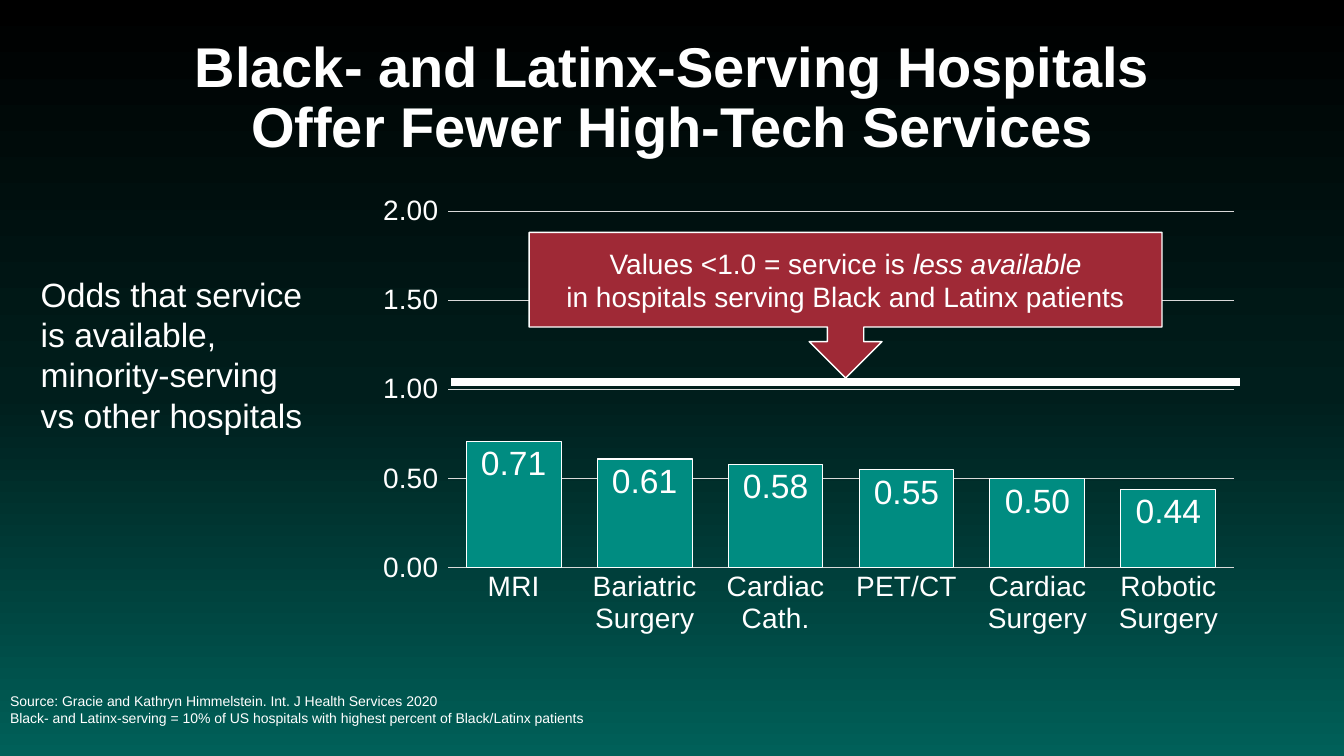
from copy import deepcopy

from pptx import Presentation
from pptx.chart.data import CategoryChartData
from pptx.dml.color import RGBColor
from pptx.enum.chart import XL_CHART_TYPE, XL_LABEL_POSITION, XL_TICK_MARK
from pptx.enum.shapes import MSO_CONNECTOR, MSO_SHAPE
from pptx.enum.text import MSO_ANCHOR, MSO_AUTO_SIZE, PP_ALIGN
from pptx.oxml.ns import qn
from pptx.oxml.xmlchemy import OxmlElement
from pptx.util import Pt

WHITE = "FFFFFF"
GRID = "D9D9D9"
TEAL = "008C81"
RED = "9F2936"
GRADIENT = [(0, "000000"), (0.52, "001E1C"), (1, "006059")]
ODDS = {
    "MRI": 0.71,
    "Bariatric\nSurgery": 0.61,
    "Cardiac\nCath.": 0.58,
    "PET/CT": 0.55,
    "Cardiac\nSurgery": 0.5,
    "Robotic\nSurgery": 0.44,
}


def color(hex_value):
    """Return the colour for a hex string."""
    return RGBColor.from_string(hex_value)


def set_values(target, values):
    """Set each named attribute of the target."""
    for name, value in values.items():
        setattr(target, name, value)


def set_font(font, size, **values):
    """Format a font as white Arial of the given size."""
    set_values(font, {"name": "Arial", "size": Pt(size), **values})
    font.color.rgb = color(WHITE)


def set_line(line, hex_value, width):
    """Give a line its colour and width."""
    line.color.rgb = color(hex_value)
    line.width = Pt(width)


def place(shape, box):
    """Move a shape to a box given in points."""
    names = ("left", "top", "width", "height")
    set_values(shape, dict(zip(names, map(Pt, box))))


def write(shape, paragraphs, size, frame_values, paragraph_values, bold=False):
    """Fill a shape with paragraphs and format all their runs."""
    frame = shape.text_frame
    set_values(frame, {"word_wrap": True, **frame_values})
    for index, text in enumerate(paragraphs):
        paragraph = frame.add_paragraph() if index else frame.paragraphs[0]
        paragraph.text = text
        set_values(paragraph, paragraph_values)
        for run in paragraph.runs:
            set_font(run.font, size, bold=bold)


def paint_background(slide):
    """Fill the background with the vertical three-stop gradient."""
    fill = slide.background.fill
    fill.gradient()
    fill.gradient_angle = 270
    stop_list = slide.element.find(".//" + qn("a:gsLst"))
    stop_list.append(deepcopy(stop_list[-1]))
    for stop, (position, hex_value) in zip(fill.gradient_stops, GRADIENT):
        stop.position = position
        stop.color.rgb = color(hex_value)


def add_title(slide, box):
    """Write the two-line title."""
    title = slide.shapes.title
    place(title, box)
    write(title, ["Black- and Latinx-Serving Hospitals\vOffer Fewer High-Tech Services"], 40,
          {"vertical_anchor": MSO_ANCHOR.MIDDLE, "auto_size": MSO_AUTO_SIZE.NONE},
          {"alignment": PP_ALIGN.CENTER, "line_spacing": 0.9}, bold=True)


def add_source(slide, box):
    """Write the source note without bullets."""
    body = slide.placeholders[1]
    place(body, box)
    write(body, ["Source: Gracie and Kathryn Himmelstein. Int. J Health Services 2020",
                 "Black- and Latinx-serving = 10% of US hospitals with highest percent "
                 "of Black/Latinx patients"], 10,
          {"vertical_anchor": MSO_ANCHOR.MIDDLE, "auto_size": MSO_AUTO_SIZE.NONE},
          {"space_before": Pt(0)})
    for paragraph in body.text_frame.paragraphs:
        properties = paragraph._p.get_or_add_pPr()
        properties.set("marL", "0")
        properties.set("indent", "0")
        properties.append(OxmlElement("a:buNone"))


def add_measure(slide, box):
    """Write what the chart measures."""
    measure = slide.shapes.add_textbox(*map(Pt, box))
    write(measure, ["Odds that service is available, minority-serving vs other hospitals"], 24,
          {"auto_size": MSO_AUTO_SIZE.SHAPE_TO_FIT_TEXT}, {"space_after": Pt(12)})


def add_odds_chart(slide, box):
    """Draw the column chart of odds by service."""
    data = CategoryChartData(number_format="0.00")
    data.categories = list(ODDS)
    data.add_series("Series 1", list(ODDS.values()))
    chart = slide.shapes.add_chart(XL_CHART_TYPE.COLUMN_CLUSTERED, *map(Pt, box), data).chart
    set_values(chart, {"has_legend": False, "has_title": False})
    set_font(chart.font, 20)

    category_axis, value_axis = chart.category_axis, chart.value_axis
    category_axis.major_tick_mark = XL_TICK_MARK.NONE
    set_line(category_axis.format.line, GRID, 0.75)
    set_values(value_axis, {"minimum_scale": 0, "maximum_scale": 2, "major_unit": 0.5,
                            "major_tick_mark": XL_TICK_MARK.OUTSIDE})
    value_axis.format.line.fill.background()
    set_line(value_axis.major_gridlines.format.line, GRID, 0.75)
    for axis in (category_axis, value_axis):
        set_font(axis.tick_labels.font, 20)
    set_values(value_axis.tick_labels, {"number_format": "0.00", "number_format_is_linked": False})

    plot = chart.plots[0]
    set_values(plot, {"gap_width": 38, "overlap": -27, "vary_by_categories": False})
    series = plot.series[0]
    series.format.fill.solid()
    series.format.fill.fore_color.rgb = color(TEAL)
    set_line(series.format.line, WHITE, 0.75)
    labels = series.data_labels
    set_values(labels, {"show_value": True, "position": XL_LABEL_POSITION.INSIDE_END,
                        "number_format": "0.00", "number_format_is_linked": False})
    set_font(labels.font, 24)


def add_even_odds_line(slide, box):
    """Draw the thick line that marks even odds."""
    left, top, width, height = box
    ends = (left, top, left + width, top + height)
    line = slide.shapes.add_connector(MSO_CONNECTOR.STRAIGHT, *map(Pt, ends))
    set_line(line.line, WHITE, 6)
    line._element.spPr.append(OxmlElement("a:effectLst"))


def add_callout(slide, box):
    """Draw the callout that explains values below one."""
    callout = slide.shapes.add_shape(MSO_SHAPE.DOWN_ARROW_CALLOUT, *map(Pt, box))
    callout.shadow.inherit = False
    callout.fill.solid()
    callout.fill.fore_color.rgb = color(RED)
    set_line(callout.line, WHITE, 1)
    write(callout, ["Values <1.0 = service is ", "in hospitals serving Black and Latinx patients"], 20,
          {"vertical_anchor": MSO_ANCHOR.MIDDLE}, {"alignment": PP_ALIGN.CENTER})
    emphasis = callout.text_frame.paragraphs[0].add_run()
    emphasis.text = "less available"
    set_font(emphasis.font, 20, italic=True)


def main():
    """Build and save the slide."""
    presentation = Presentation()
    set_values(presentation, {"slide_width": Pt(960), "slide_height": Pt(540)})
    slide = presentation.slides.add_slide(presentation.slide_layouts[1])
    paint_background(slide)
    add_title(slide, (66, 19, 828, 104))
    add_source(slide, (0, 474, 670, 66))
    add_measure(slide, (22, 192, 212, 124))
    add_odds_chart(slide, (261, 133, 633, 327))
    add_even_odds_line(slide, (322.5, 273, 563, 0))
    add_callout(slide, (378, 166, 452, 104))
    presentation.save("out.pptx")


if __name__ == "__main__":
    main()
